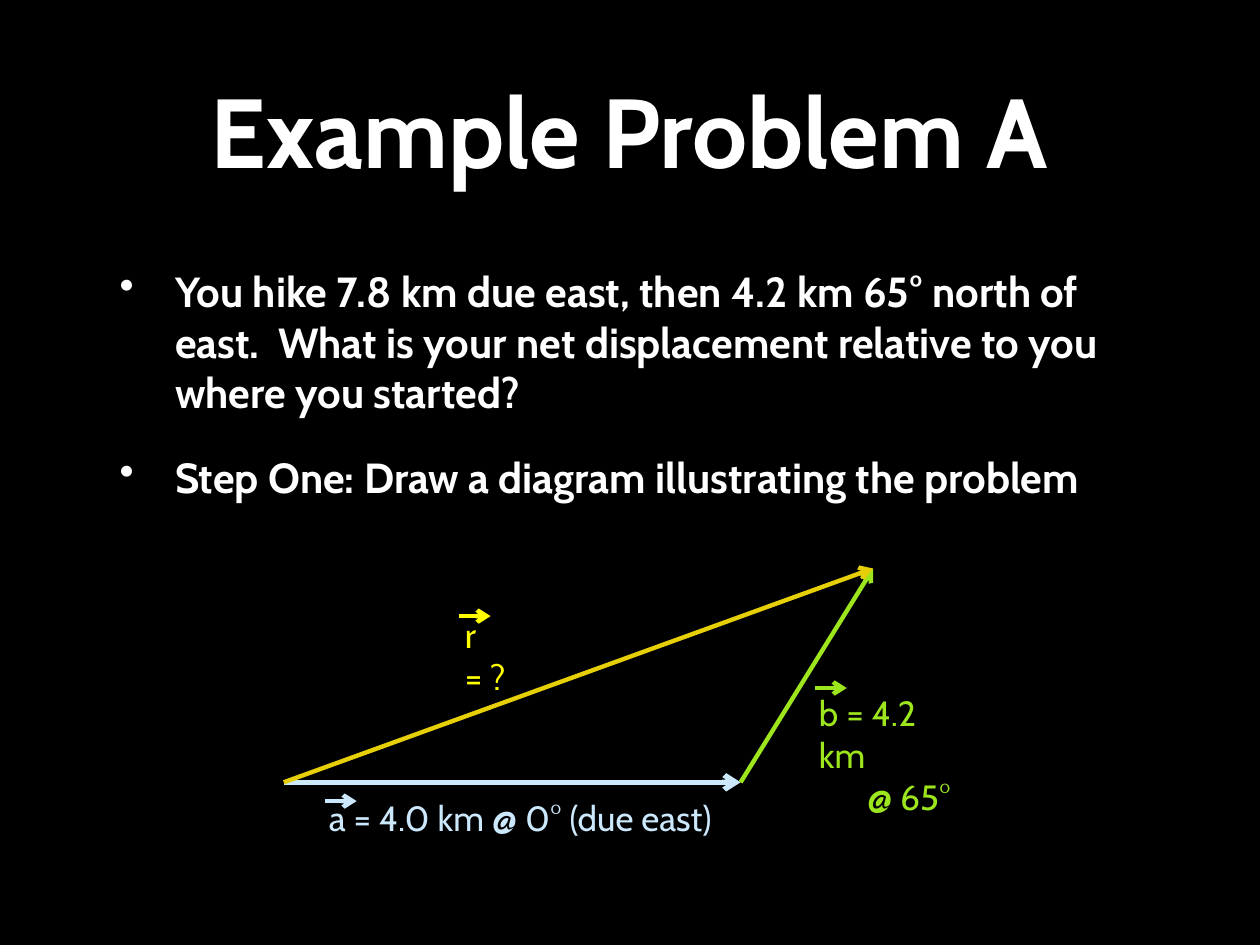
from lxml import etree
from pptx import Presentation
from pptx.dml.color import RGBColor
from pptx.enum import shapes, text
from pptx.oxml.ns import qn
from pptx.util import Cm, Pt

COLORS = {"black": "000000", "white": "FFFFFF", "blue": "CCE8FC",
          "green": "9DE61E", "gold": "E7CF08", "yellow": "FFFF00"}
FONT = "Cabin"

TITLE = "Example Problem A"
BULLETS = [
    "You hike 7.8 km due east, then 4.2 km 65° north of east.  "
    "What is your net displacement relative to you where you started?",
    "Step One: Draw a diagram illustrating the problem",
]

# Points of the vector triangle, in cm
START, CORNER, TIP = (5.72, 15.77), (14.93, 15.77), (17.6, 11.46)
VECTORS = [
    (START, CORNER, "blue", 3),
    (CORNER, TIP, "green", 2.5),
    (START, TIP, "gold", 2.5),
]

# (text, left indent) lines, box in cm, colour, start of the small vector sign
LABELS = [
    ([("a = 4.0 km @ 0° (due east)", 0)], (6.38, 15.93, 8.41, 1.12), "blue", (6.55, 16.15)),
    ([("b = 4.2 km", 0), ("@ 65°", 0.97)], (16.26, 13.82, 3.45, 3), "green", (16.43, 13.87)),
    ([("r = ?", 0)], (9.12, 12.24, 1.68, 1.12), "yellow", (9.25, 12.42)),
]
SIGN_LENGTH = 0.64


def color(name):
    return RGBColor.from_string(COLORS[name])


def place(shape, box):
    for side, value in zip(("left", "top", "width", "height"), box):
        setattr(shape, side, Cm(value))


def format_text(target, size, name, bold=False):
    for key, value in {"name": FONT, "size": Pt(size), "bold": bold}.items():
        setattr(target.font, key, value)
    target.font.color.rgb = color(name)


def indent(para, left, first=0):
    properties = para._p.get_or_add_pPr()
    properties.set("marL", str(Cm(left)))
    properties.set("indent", str(Cm(first)))
    return properties


def add_text(page, box):
    shape = page.shapes.add_textbox(*map(Cm, box))
    shape.text_frame.word_wrap = True
    return shape.text_frame


def add_paragraphs(frame, lines):
    """Fill the frame with one paragraph a line and return the paragraphs."""
    frame.text = "\n".join(lines)
    return frame.paragraphs


def add_arrow(page, start, end, name, width):
    arrow = page.shapes.add_connector(
        shapes.MSO_CONNECTOR.STRAIGHT, *map(Cm, start + end))
    arrow.line.color.rgb = color(name)
    arrow.line.width = Pt(width)
    etree.SubElement(arrow.line._get_or_add_ln(), qn("a:tailEnd"), type="arrow")
    etree.SubElement(arrow._element.spPr, qn("a:effectLst"))


def add_title(page):
    title = page.shapes.title
    place(title, (2.16, 0.3, 21.06, 4.6))
    frame = title.text_frame
    frame.text = TITLE
    frame.auto_size = text.MSO_AUTO_SIZE.NONE
    frame.vertical_anchor = text.MSO_ANCHOR.MIDDLE
    frame.paragraphs[0].alignment = text.PP_ALIGN.CENTER
    format_text(frame.paragraphs[0].runs[0], 56, "white", True)


def add_bullets(page):
    frame = add_text(page, (2.16, 5.23, 21.06, 5.87))
    for number, para in enumerate(add_paragraphs(frame, BULLETS)):
        properties = indent(para, 1.12, -1.12)
        etree.SubElement(properties, qn("a:buChar"), char="•")
        para.space_before = Pt(20 if number else 0)
        format_text(para.runs[0], 24, "white", True)


def add_label(page, lines, box, name, sign):
    paragraphs = add_paragraphs(add_text(page, box), [line for line, _ in lines])
    for para, (_, left) in zip(paragraphs, lines):
        indent(para, left)
        format_text(para.runs[0], 20, name)
    add_arrow(page, sign, (sign[0] + SIGN_LENGTH, sign[1]), name, 2.5)


def main():
    deck = Presentation()
    deck.slide_width, deck.slide_height = Cm(25.4), Cm(19.05)
    page = deck.slides.add_slide(deck.slide_layouts[5])
    page.background.fill.solid()
    page.background.fill.fore_color.rgb = color("black")
    add_title(page)
    add_bullets(page)
    for vector in VECTORS:
        add_arrow(page, *vector)
    for label in LABELS:
        add_label(page, *label)
    deck.save("out.pptx")


if __name__ == "__main__":
    main()
